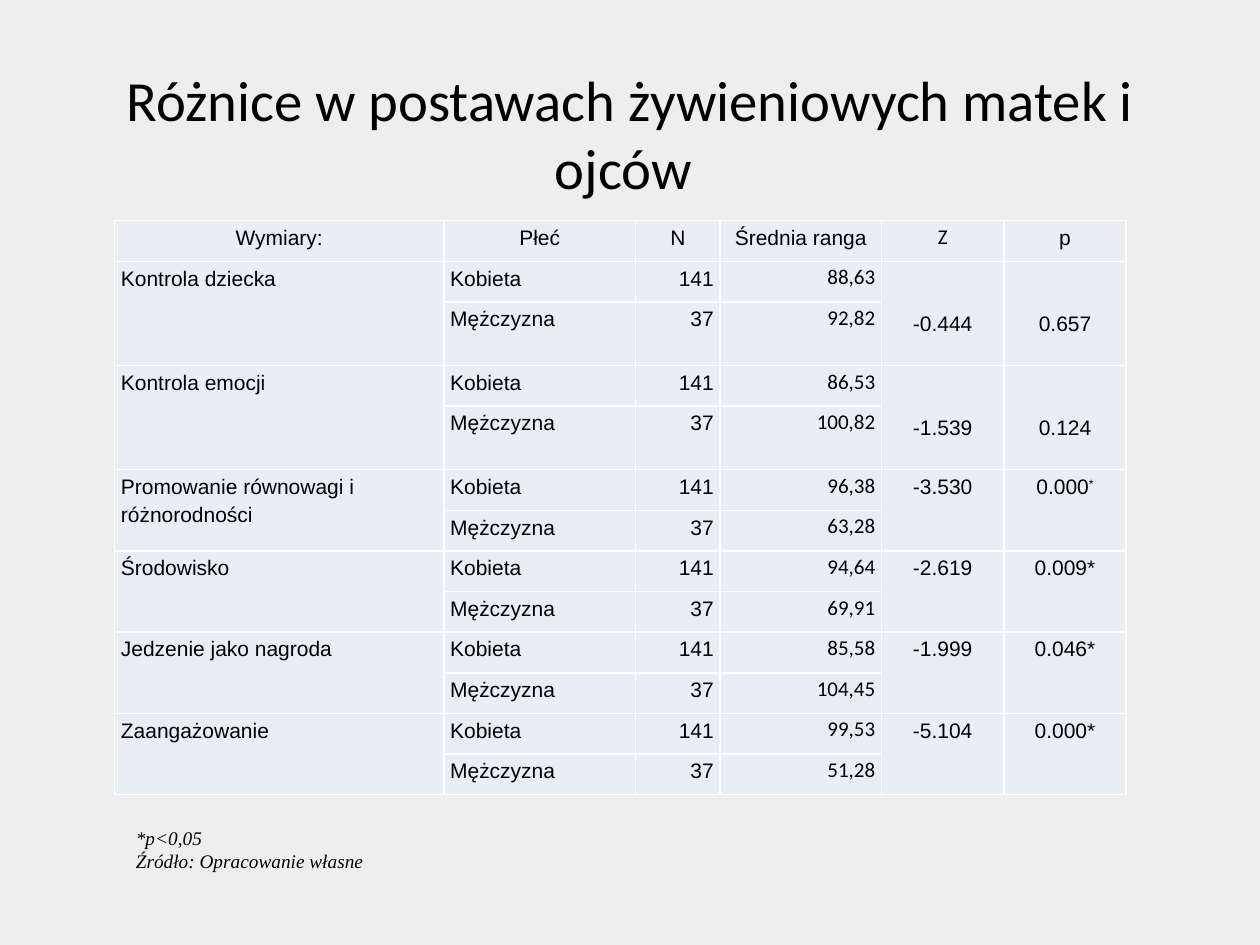
from dataclasses import dataclass

from lxml import etree
from pptx import Presentation
from pptx import util as u
from pptx.dml.color import RGBColor
from pptx.enum import text
from pptx.oxml import ns

LEFT, CENTER, RIGHT = text.PP_ALIGN.LEFT, text.PP_ALIGN.CENTER, text.PP_ALIGN.RIGHT


@dataclass(frozen=True)
class Theme:
    background: str = "EEEEEE"
    cell: str = "E9EDF4"
    border: str = "FFFFFF"
    ink: str = "000000"
    heading_font: str = "Calibri"
    table_font: str = "Arial"
    note_font: str = "Times New Roman"
    heading_size: float = 32.4
    table_size: float = 12
    note_size: float = 11
    line_pitch: float = 16
    gap_after: float = 10


def write(paragraph, content, *, font, size, color, align=LEFT, italic=False,
          superscript=False):
    """Add one formatted run to a paragraph."""
    paragraph.alignment = align
    run = paragraph.add_run()
    run.text = content
    run.font.name, run.font.size, run.font.italic = font, u.Pt(size), italic
    run.font.color.rgb = RGBColor.from_string(color)
    if superscript:
        run._r.get_or_add_rPr().set("baseline", "30000")


class SlideBuilder:
    def __init__(self, deck, theme):
        self.deck, self.theme = deck, theme
        self.slide = deck.slides.add_slide(deck.slide_layouts[6])
        fill = self.slide.background.fill
        fill.solid()
        fill.fore_color.rgb = RGBColor.from_string(theme.background)

    def area(self, left, top, width, height):
        """Turn shares of the slide's size into lengths."""
        across, down = self.deck.slide_width, self.deck.slide_height
        return (round(left * across), round(top * down),
                round(width * across), round(height * down))

    def text_box(self, area, lines, anchor=text.MSO_ANCHOR.TOP, **style):
        frame = self.slide.shapes.add_textbox(*self.area(*area)).text_frame
        frame.word_wrap, frame.vertical_anchor = True, anchor
        for index, line in enumerate(lines):
            paragraph = frame.add_paragraph() if index else frame.paragraphs[0]
            write(paragraph, line, color=self.theme.ink, **style)

    def table(self, area, column_weights, row_weights):
        left, top, width, height = self.area(*area)
        grid = self.slide.shapes.add_table(
            len(row_weights), len(column_weights), left, top, width, height).table
        grid.first_row = grid.horz_banding = False
        for column, weight in zip(grid.columns, column_weights):
            column.width = round(width * weight / sum(column_weights))
        for row, weight in zip(grid.rows, row_weights):
            row.height = round(height * weight / sum(row_weights))
        for cell in grid.iter_cells():
            self.plain_cell(cell)
        return grid

    def plain_cell(self, cell):
        cell.margin_left = cell.margin_right = cell.margin_top = u.Inches(0.01)
        cell.margin_bottom = 0
        properties = cell._tc.get_or_add_tcPr()
        for side in ("a:lnL", "a:lnR", "a:lnT", "a:lnB"):
            line = etree.SubElement(properties, ns.qn(side), w=str(u.Pt(1)))
            solid = etree.SubElement(line, ns.qn("a:solidFill"))
            etree.SubElement(solid, ns.qn("a:srgbClr"), val=self.theme.border)
        cell.fill.solid()
        cell.fill.fore_color.rgb = RGBColor.from_string(self.theme.cell)

    def cell_text(self, cell, content, align=LEFT, font=None, mark="", lowered=False):
        theme = self.theme
        paragraph = cell.text_frame.paragraphs[0]
        indent = str(u.Inches(0.04))
        properties = paragraph._p.get_or_add_pPr()
        properties.set("marL", indent)
        properties.set("marR", indent)
        paragraph.line_spacing = u.Pt(theme.line_pitch)
        paragraph.space_after = u.Pt(theme.gap_after)
        style = dict(font=font or theme.table_font, size=theme.table_size,
                     color=theme.ink, align=align)
        write(paragraph, content, **style)
        if mark:
            write(paragraph, mark, superscript=True, **style)
        if lowered:  # one text line further down
            cell.margin_top += u.Pt(theme.line_pitch + theme.gap_after)


HEADERS = ("Wymiary:", "Płeć", "N", "Średnia ranga", "Z", "p")
SEXES = (("Kobieta", "141"), ("Mężczyzna", "37"))
# dimension, mean ranks (women, men), Z, p, raised mark, tall group
DIMENSIONS = (
    ("Kontrola dziecka", ("88,63", "92,82"), "-0.444", "0.657", "", True),
    ("Kontrola emocji", ("86,53", "100,82"), "-1.539", "0.124", "", True),
    ("Promowanie równowagi i różnorodności", ("96,38", "63,28"),
     "-3.530", "0.000", "*", False),
    ("Środowisko", ("94,64", "69,91"), "-2.619", "0.009*", "", False),
    ("Jedzenie jako nagroda", ("85,58", "104,45"), "-1.999", "0.046*", "", False),
    ("Zaangażowanie", ("99,53", "51,28"), "-5.104", "0.000*", "", False),
)
COLUMN_WEIGHTS = (261, 152, 67, 128, 97, 97)
ROW, TALL_ROW = 32, 50


def main():
    deck = Presentation()
    deck.slide_width, deck.slide_height = u.Inches(10), u.Inches(7.5)
    theme = Theme()
    builder = SlideBuilder(deck, theme)

    # Title
    builder.text_box((0.05, 0.052, 0.9, 0.167),
                     ["Różnice w postawach żywieniowych matek i ojców "],
                     anchor=text.MSO_ANCHOR.BOTTOM, align=CENTER,
                     font=theme.heading_font, size=theme.heading_size)

    # Results table: a header row, then two rows per dimension
    row_weights = [ROW]
    for *_, tall in DIMENSIONS:
        row_weights += [ROW, TALL_ROW if tall else ROW]
    results = builder.table((0.091, 0.2335, 0.803, 0.608), COLUMN_WEIGHTS, row_weights)

    for column, header in enumerate(HEADERS):
        builder.cell_text(results.cell(0, column), header, CENTER,
                          font=theme.heading_font if header == "Z" else None)

    for index, (dimension, ranks, z, p, mark, tall) in enumerate(DIMENSIONS):
        first = 1 + 2 * index
        for column in (0, 4, 5):
            results.cell(first, column).merge(results.cell(first + 1, column))
        builder.cell_text(results.cell(first, 0), dimension)
        builder.cell_text(results.cell(first, 4), z, CENTER, lowered=tall)
        builder.cell_text(results.cell(first, 5), p, CENTER, mark=mark, lowered=tall)
        for row, ((sex, count), rank) in enumerate(zip(SEXES, ranks), first):
            builder.cell_text(results.cell(row, 1), sex)
            builder.cell_text(results.cell(row, 2), count, RIGHT)
            builder.cell_text(results.cell(row, 3), rank, RIGHT, theme.heading_font)

    # Footnote and source
    builder.text_box((0.098, 0.868, 0.26, 0.103),
                     ["*p<0,05", "Źródło: Opracowanie własne"],
                     font=theme.note_font, size=theme.note_size, italic=True)

    deck.save("out.pptx")


if __name__ == "__main__":
    main()
